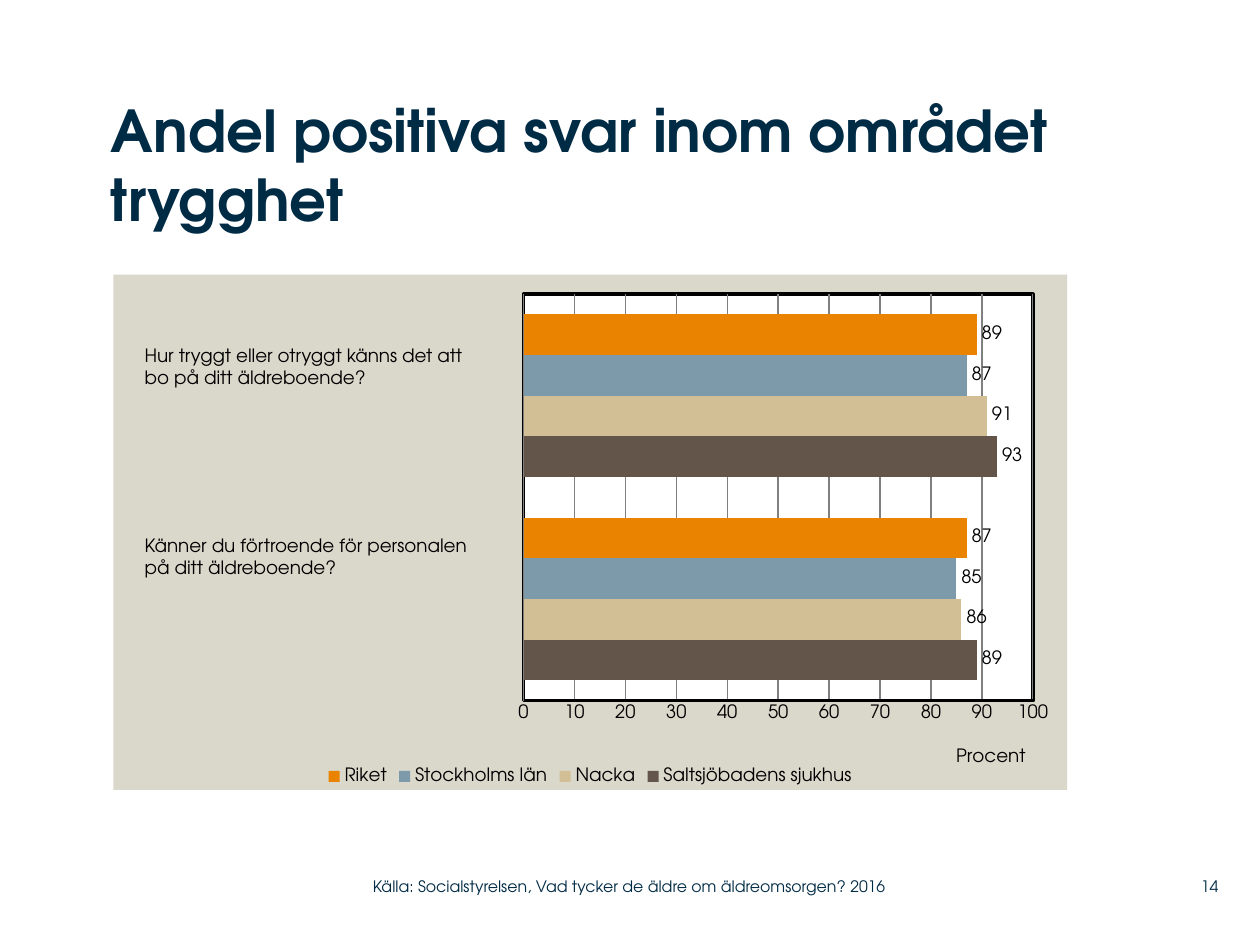
from lxml import etree
from pptx import Presentation
from pptx.chart.data import CategoryChartData
from pptx.dml.color import RGBColor
from pptx.enum.chart import XL_CHART_TYPE as ChartType, XL_LABEL_POSITION as LabelPos
from pptx.enum.chart import XL_LEGEND_POSITION as LegendPos, XL_TICK_MARK as TickMark
from pptx.enum.text import MSO_ANCHOR as Anchor, PP_ALIGN as Align
from pptx.oxml import parse_xml
from pptx.oxml.ns import nsdecls, qn
from pptx.util import Inches, Pt

FONT = "TeX Gyre Adventor"
NAVY, BLACK, WHITE, SAND, GREY = "002B45", "000000", "FFFFFF", "DAD7CB", "808080"
SERIES = [
    ("Saltsjöbadens sjukhus", (89, 93), "635549"),
    ("Nacka", (86, 91), "D3BF96"),
    ("Stockholms län", (85, 87), "7D9AAA"),
    ("Riket", (87, 89), "E98300"),
]
QUESTIONS = [
    (2.68, ["Hur tryggt eller otryggt känns det att bo på ditt äldreboende?"]),
    (4.19, ["Känner du förtroende för personalen", "på ditt äldreboende?"]),
]


def color(code):
    return RGBColor.from_string(code)


def style_font(font, size=10.5, ink=BLACK, bold=False):
    font.name, font.size, font.bold = FONT, Pt(size), bold
    font.color.rgb = color(ink)


def add_text(slide, lines, box, align=Align.LEFT, anchor=Anchor.TOP, padded=False, **style):
    frame = slide.shapes.add_textbox(*map(Inches, box)).text_frame
    frame.word_wrap, frame.vertical_anchor = True, anchor
    if not padded:
        frame.margin_left = frame.margin_right = frame.margin_top = frame.margin_bottom = 0
    for index, line in enumerate(lines):
        paragraph = frame.add_paragraph() if index else frame.paragraphs[0]
        paragraph.alignment = align
        run = paragraph.add_run()
        run.text = line
        style_font(run.font, **style)


def manual_layout(**values):
    layout = parse_xml(f"<c:layout {nsdecls('c')}><c:manualLayout/></c:layout>")
    for tag, value in values.items():
        etree.SubElement(layout[0], qn(f"c:{tag}")).set("val", str(value))
    return layout


def area_format(fill, line=None):
    paint = '<a:solidFill><a:srgbClr val="{}"/></a:solidFill>'
    outline = f'<a:ln w="{Pt(2)}">{paint.format(line)}</a:ln>' if line else "<a:ln><a:noFill/></a:ln>"
    return parse_xml(f"<c:spPr {nsdecls('c', 'a')}>{paint.format(fill)}{outline}</c:spPr>")


def style_value_axis(axis):
    axis.minimum_scale, axis.maximum_scale, axis.major_unit = 0, 100, 10
    axis.major_tick_mark = axis.minor_tick_mark = TickMark.NONE
    axis.format.line.color.rgb = color(BLACK)
    axis.format.line.width = Pt(2)
    axis.has_major_gridlines = True
    axis.major_gridlines.format.line.color.rgb = color(GREY)
    axis.major_gridlines.format.line.width = Pt(0.75)
    style_font(axis.tick_labels.font)
    title = axis.axis_title
    caption = title.text_frame.paragraphs[0].add_run()
    caption.text = "Procent"
    style_font(caption.font)
    for old in title._element.findall(qn("c:layout")):
        title._element.remove(old)
    title._element.find(qn("c:tx")).addnext(
        manual_layout(xMode="edge", yMode="edge", x=0.88, y=0.91))


def style_areas(chart):
    space = chart._chartSpace
    space.chart.addnext(area_format(SAND))
    plot_area = space.chart.plotArea
    for old in plot_area.findall(qn("c:layout")):
        plot_area.remove(old)
    plot_area.insert(0, manual_layout(
        layoutTarget="inner", xMode="edge", yMode="edge", x=0.43, y=0.038, w=0.534, h=0.789))
    plot_area.append(area_format(WHITE, BLACK))


def add_bars(slide, box):
    data = CategoryChartData()
    data.categories = ["1", "2"]
    for name, values, _ in SERIES:
        data.add_series(name, values)
    chart = slide.shapes.add_chart(ChartType.BAR_CLUSTERED, *map(Inches, box), data).chart
    style_font(chart.font)
    chart.has_title = False
    chart.has_legend = True
    chart.legend.position = LegendPos.BOTTOM
    chart.legend.include_in_layout = False
    style_font(chart.legend.font)
    chart.category_axis.visible = False
    style_value_axis(chart.value_axis)
    plot = chart.plots[0]
    plot.gap_width, plot.overlap, plot.vary_by_categories = 100, 0, False
    for series, (_, _, fill) in zip(plot.series, SERIES):
        series.format.fill.solid()
        series.format.fill.fore_color.rgb = color(fill)
        labels = series.data_labels
        labels.show_value, labels.position = True, LabelPos.OUTSIDE_END
        style_font(labels.font)
    style_areas(chart)


def main():
    deck = Presentation()
    deck.slide_width, deck.slide_height = Inches(10), Inches(7.5)
    slide = deck.slides.add_slide(deck.slide_layouts[6])
    add_bars(slide, (0.9, 2.18, 7.57, 4.09))
    add_text(slide, ["Andel positiva svar inom området trygghet"], (0.88, 0.75, 7.6, 1.42),
             size=33, ink=NAVY, bold=True)
    for top, question in QUESTIONS:
        add_text(slide, question, (1.05, top, 2.94, 0.45), padded=True)
    footer = {"anchor": Anchor.MIDDLE, "size": 9, "ink": NAVY}
    add_text(slide, ["14"], (9.2, 6.89, 0.47, 0.29), align=Align.RIGHT, **footer)
    add_text(slide, ["Källa: Socialstyrelsen, Vad tycker de äldre om äldreomsorgen? 2016"],
             (2.96, 6.89, 4.43, 0.29), **footer)
    deck.save("out.pptx")


if __name__ == "__main__":
    main()
